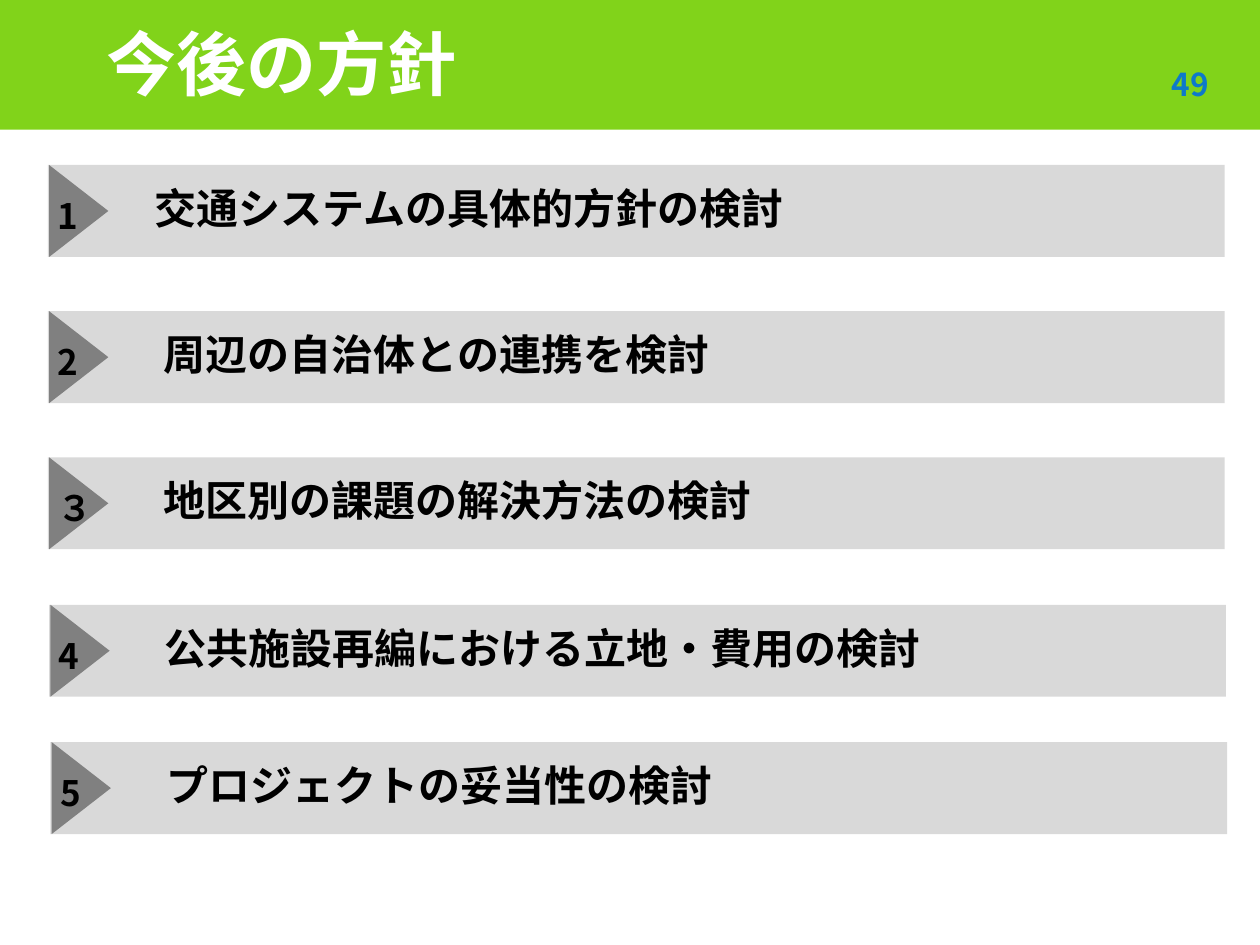
from pptx import Presentation
from pptx.dml.color import RGBColor
from pptx.enum.shapes import MSO_SHAPE
from pptx.enum.text import MSO_ANCHOR
from pptx.oxml.ns import qn
from pptx.util import Inches, Pt

RECT, WEDGE = MSO_SHAPE.RECTANGLE, MSO_SHAPE.ISOSCELES_TRIANGLE
MIDDLE = MSO_ANCHOR.MIDDLE

THEME = {
    "font": "Noto Sans CJK JP",
    "band": "81D31A", "bar": "D9D9D9", "wedge": "808080",
    "title": "FFFFFF", "page": "0D79CA", "text": "000000",
    "title_size": 40, "page_size": 18, "mark_size": 20, "item_size": 24,
}

deck = Presentation()
deck.slide_width, deck.slide_height = Inches(10), Inches(7.5)
CELL = deck.slide_width / 100  # the slide is a grid of 100 columns by 75 rows
slide = deck.slides.add_slide(deck.slide_layouts[6])


def draw(shapes, kind, box, color, turn=0):
    shape = shapes.add_shape(kind, *[round(n * CELL) for n in box])
    shape.shadow.inherit = False
    shape.fill.solid()
    shape.fill.fore_color.rgb = RGBColor.from_string(THEME[color])
    shape.line.fill.background()
    shape.rotation = turn


def write(shapes, text, box, size, color="text", left=0.1, space=None):
    frame = shapes.add_textbox(*[round(n * CELL) for n in box]).text_frame
    frame.word_wrap = True
    frame.vertical_anchor = MIDDLE
    frame.margin_left = Inches(left)
    line = frame.paragraphs[0]
    line.line_spacing = space
    run = line.add_run()
    run.text = text
    font = run.font
    font.name, font.size, font.bold = THEME["font"], Pt(THEME[size]), True
    font.color.rgb = RGBColor.from_string(THEME[color])
    asian = font._element.makeelement(qn("a:ea"), {"typeface": THEME["font"]})
    font._element.find(qn("a:latin")).addnext(asian)


draw(slide.shapes, RECT, (0, -0.3, 100, 10.6), "band")
write(slide.shapes, "今後の方針", (7.5, 2, 85, 7), "title_size", "title", space=0.85)
write(slide.shapes, "49", (92.5, 4.5, 4.9, 4.3), "page_size", "page", left=0.05)

# Each item: left column, top row, indent of its text, number, text
ITEMS = [
    (3.8, 13.1, 7.5, "1", "交通システムの具体的方針の検討"),
    (3.8, 24.7, 8.2, "2", "周辺の自治体との連携を検討"),
    (3.8, 36.3, 8.2, "３", "地区別の課題の解決方法の検討"),
    (3.9, 48, 8.2, "4", "公共施設再編における立地・費用の検討"),
    (4, 58.9, 8.2, "5", "プロジェクトの妥当性の検討"),
]
for col, row, indent, mark, text in ITEMS:
    group = slide.shapes.add_group_shape().shapes
    draw(group, RECT, (col, row, 93.4, 7.3), "bar")
    draw(group, WEDGE, (col - 1.2, row + 1.3, 7.3, 4.7), "wedge", turn=90)
    write(group, mark, (col - 0.2, row + 1.8, 4.3, 4.4), "mark_size")
    write(group, text, (col + indent, row + 0.9, 84.1, 5), "item_size")

deck.save("out.pptx")
